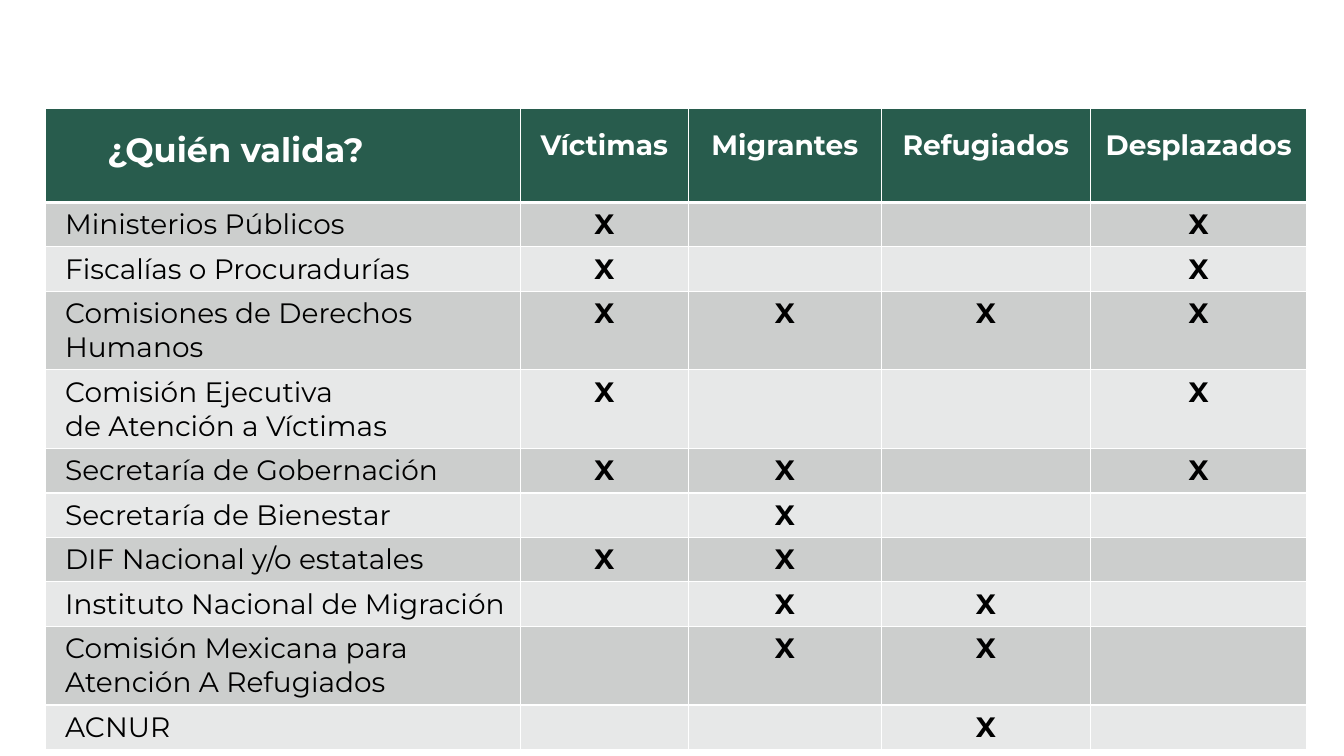
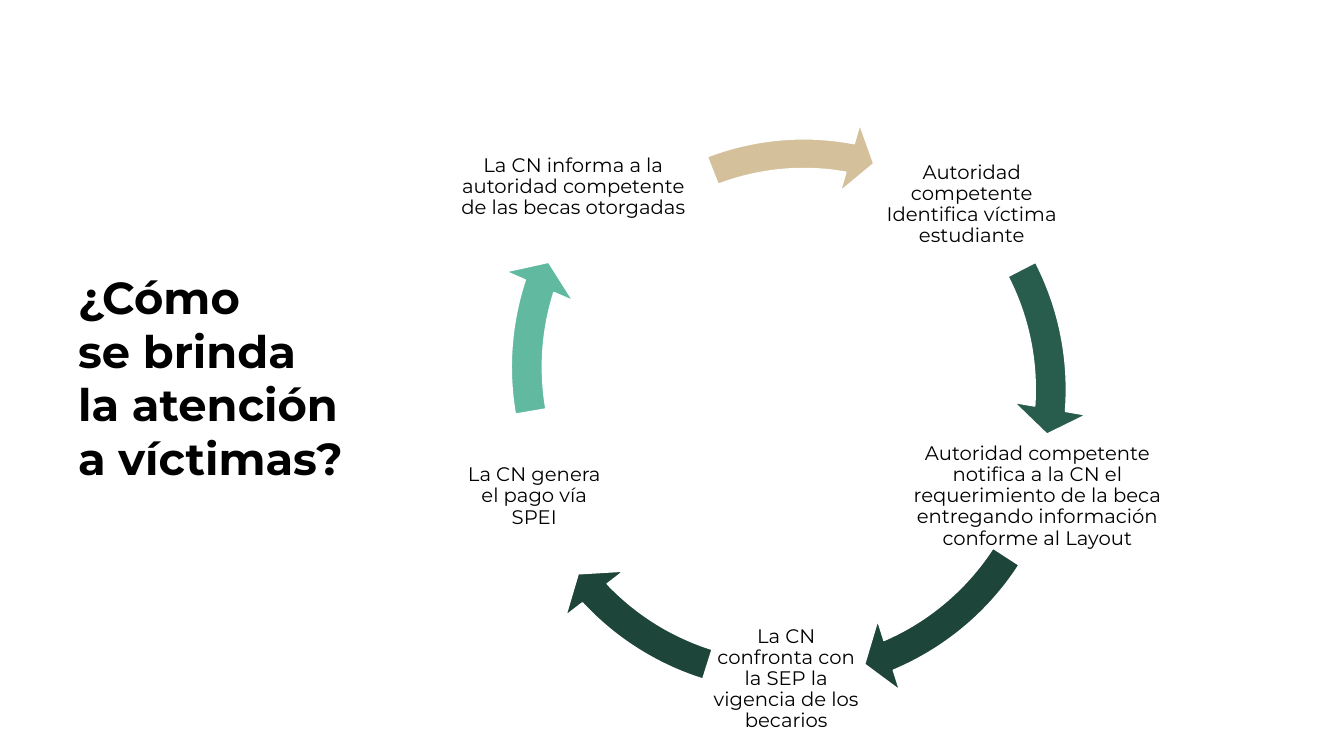
from dataclasses import dataclass
from typing import NamedTuple

from lxml.etree import SubElement
from pptx import Presentation
from pptx.dml.color import RGBColor
from pptx.enum.shapes import MSO_SHAPE
from pptx.enum.text import MSO_ANCHOR, PP_ALIGN
from pptx.oxml.ns import qn
from pptx.util import Cm, Pt


@dataclass(frozen=True)
class Theme:
    font: str = "Montserrat"
    white: str = "FFFFFF"
    black: str = "000000"
    green: str = "285C4D"
    dark_green: str = "1E453A"
    mint: str = "61BAA0"
    sand: str = "D4C19C"
    band_dark: str = "CCCECD"
    band_light: str = "E7E8E8"
    title_size: int = 32
    heading_size: int = 24
    table_size: int = 20
    step_size: int = 14


THEME = Theme()


class Place(NamedTuple):
    """Left, top, width and height in centimetres."""
    left: float
    top: float
    width: float
    height: float

    def lengths(self) -> tuple:
        return tuple(Cm(value) for value in self)


class Validator(NamedTuple):
    name: str
    marks: str  # one character per group: X where it validates


class Step(NamedTuple):
    text: str
    place: Place


class Arrow(NamedTuple):
    place: Place
    start: float  # degrees, clockwise from the right
    end: float
    color: str


GROUPS = ("Víctimas", "Migrantes", "Refugiados", "Desplazados")
COLUMN_WIDTHS = (11.97, 4.24, 4.86, 5.27, 5.46)
HEADER_HEIGHT, ROW_HEIGHT = 2.36, 1.04
VALIDATORS = (
    Validator("Ministerios Públicos", "X--X"),
    Validator("Fiscalías o Procuradurías", "X--X"),
    Validator("Comisiones de Derechos Humanos", "XXXX"),
    Validator("Comisión Ejecutiva\nde Atención a Víctimas", "X--X"),
    Validator("Secretaría de Gobernación", "XX-X"),
    Validator("Secretaría de Bienestar", "-X--"),
    Validator("DIF Nacional y/o estatales", "XX--"),
    Validator("Instituto Nacional de Migración", "-XX-"),
    Validator("Comisión Mexicana para Atención A Refugiados", "-XX-"),
    Validator("ACNUR", "--X-"),
)

STEPS = (
    Step("Autoridad competente Identifica víctima estudiante",
         Place(22.05, 3.57, 4.88, 3.18)),
    Step("Autoridad competente notifica a la CN el requerimiento de la beca "
         "entregando información conforme al Layout",
         Place(22.31, 10.95, 7.67, 3.12)),
    Step("La CN confronta con la SEP la vigencia de los becarios",
         Place(17.81, 15.11, 4.01, 4.01)),
    Step("La CN genera el pago vía SPEI",
         Place(11.46, 10.51, 4.01, 4.01)),
    Step("La CN informa a la autoridad competente de las becas otorgadas",
         Place(11.35, 2.71, 6.2, 4.01)),
)

RING = 15.04
LOWER_RING = Place(12.29, 2.92, RING, RING)
ARROW_THICKNESS, ARROW_HEAD_WIDTH = 5.2, 6.1  # percent of the ring
ARROW_HEAD_ANGLE = 5.59
ARROWS = (
    Arrow(Place(12.36, 2.29, RING, RING), 332.78, 4.26, THEME.green),
    Arrow(LOWER_RING, 32.91, 66.95, THEME.dark_green),
    Arrow(LOWER_RING, 107.46, 136.89, THEME.dark_green),
    Arrow(Place(12.36, 1.73, RING, RING), 170.22, 197.97, THEME.mint),
    Arrow(Place(13.03, 3, 14.45, 14.33), 248.66, 280.71, THEME.sand),
)


def rgb(color: str) -> RGBColor:
    return RGBColor.from_string(color)


def write(frame, text: str, *, size: int, color: str = THEME.black,
          bold: bool = False, align=PP_ALIGN.LEFT, spacing: float = 1.0) -> None:
    para = frame.paragraphs[0]
    para.text = text.replace("\n", "\v")
    para.alignment = align
    para.line_spacing = spacing
    for span in para.runs:
        span.font.name = THEME.font
        span.font.size = Pt(size)
        span.font.bold = bold
        span.font.color.rgb = rgb(color)


def add_text(page, place: Place, text: str, **text_format) -> None:
    frame = page.shapes.add_textbox(*place.lengths()).text_frame
    frame.word_wrap = True
    write(frame, text, **text_format)


def set_borders(cell, top: float, bottom: float) -> None:
    properties = cell._tc.get_or_add_tcPr()
    widths = {"a:lnL": 1, "a:lnR": 1, "a:lnT": top, "a:lnB": bottom}
    for index, (tag, width) in enumerate(widths.items()):
        line = SubElement(properties, qn(tag), w=str(Pt(width)))
        fill = SubElement(line, qn("a:solidFill"))
        SubElement(fill, qn("a:srgbClr"), val=THEME.white)
        properties.insert(index, line)  # borders come before the cell fill


def style_cell(cell, row: int) -> None:
    bands = (THEME.band_light, THEME.band_dark)
    cell.fill.solid()
    cell.fill.fore_color.rgb = rgb(bands[row % 2] if row else THEME.green)
    set_borders(cell, top=3 if row == 1 else 1, bottom=1 if row else 3)


def add_validator_table(page) -> None:
    place = Place(1.14, 2.74, sum(COLUMN_WIDTHS),
                  HEADER_HEIGHT + ROW_HEIGHT * len(VALIDATORS))
    table = page.shapes.add_table(
        len(VALIDATORS) + 1, len(COLUMN_WIDTHS), *place.lengths()).table
    for column, width in zip(table.columns, COLUMN_WIDTHS):
        column.width = Cm(width)
    for index, row in enumerate(table.rows):
        row.height = Cm(ROW_HEIGHT if index else HEADER_HEIGHT)
        for cell in row.cells:
            style_cell(cell, index)

    for column, group in enumerate(GROUPS, start=1):
        cell = table.cell(0, column)
        cell.margin_top = Cm(0.5)
        write(cell.text_frame, group, size=THEME.table_size,
              color=THEME.white, bold=True, align=PP_ALIGN.CENTER)
    for row, validator in enumerate(VALIDATORS, start=1):
        cell = table.cell(row, 0)
        cell.margin_left = Cm(0.5)
        write(cell.text_frame, validator.name, size=THEME.table_size)
        for column, mark in enumerate(validator.marks, start=1):
            if mark == "X":
                write(table.cell(row, column).text_frame, mark, bold=True,
                      size=THEME.table_size, align=PP_ALIGN.CENTER)


def add_step(page, step: Step) -> None:
    """Draw the step as an unfilled outline that holds centred text."""
    left, top, width, height = step.place.lengths()
    right, bottom = left + width, top + height
    builder = page.shapes.build_freeform(left, top)
    builder.add_line_segments(
        ((right, top), (right, bottom), (left, bottom)), close=True)
    shape = builder.convert_to_shape()
    shape.shadow.inherit = False
    shape.fill.background()
    shape.line.fill.background()
    frame = shape.text_frame
    frame.word_wrap = True
    frame.vertical_anchor = MSO_ANCHOR.MIDDLE
    frame.margin_left = frame.margin_right = Cm(0.08)
    frame.margin_top = frame.margin_bottom = Cm(0.05)
    write(frame, step.text, size=THEME.step_size, align=PP_ALIGN.CENTER,
          spacing=0.9)


def add_arrow(page, arrow: Arrow) -> None:
    shape = page.shapes.add_shape(
        MSO_SHAPE.CIRCULAR_ARROW, *arrow.place.lengths())
    shape.shadow.inherit = False
    shape.fill.solid()
    shape.fill.fore_color.rgb = rgb(arrow.color)
    shape.line.color.rgb = rgb(THEME.white)
    shape.line.width = Pt(1)
    degree = 0.6  # 60000 units per degree, on a scale of 100000
    values = (ARROW_THICKNESS / 100, ARROW_HEAD_ANGLE * degree,
              arrow.end * degree, arrow.start * degree, ARROW_HEAD_WIDTH / 100)
    for index, value in enumerate(values):
        shape.adjustments[index] = value


def build_validators(page) -> None:
    add_validator_table(page)
    add_text(page, Place(0.93, 3.12, 10.01, 1.27), "¿Quién valida?",
             size=THEME.heading_size, color=THEME.white, bold=True,
             align=PP_ALIGN.CENTER)


def build_cycle(page) -> None:
    add_text(page, Place(1.72, 6.67, 8.61, 5.74),
             "¿Cómo\nse brinda\nla atención\na víctimas?",
             size=THEME.title_size, bold=True)
    for step, arrow in zip(STEPS, ARROWS):
        add_step(page, step)
        add_arrow(page, arrow)


def main() -> None:
    deck = Presentation()
    deck.slide_width, deck.slide_height = Cm(33.87), Cm(19.05)
    for build in (build_validators, build_cycle):
        build(deck.slides.add_slide(deck.slide_layouts[6]))
    deck.save("out.pptx")


if __name__ == "__main__":
    main()
